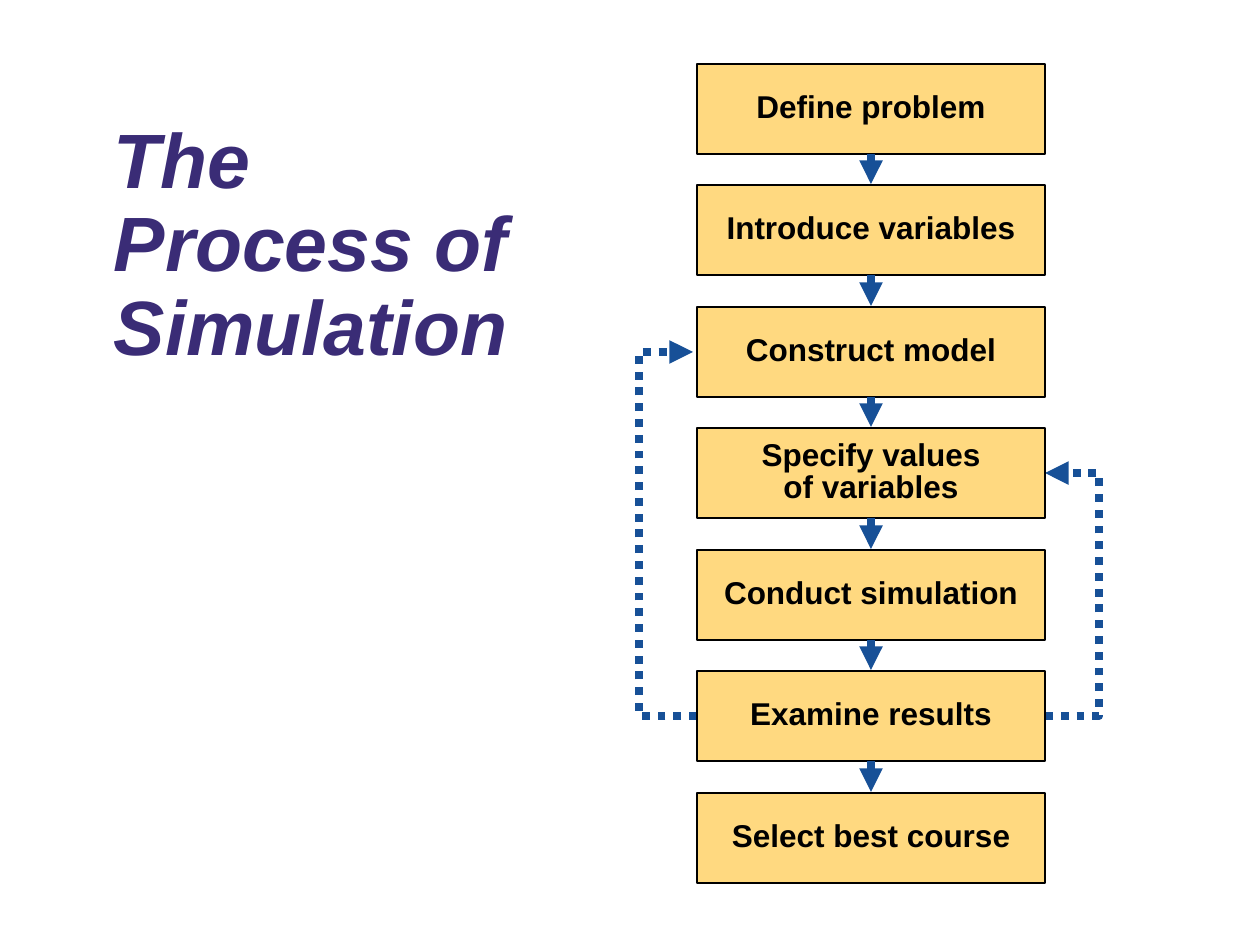
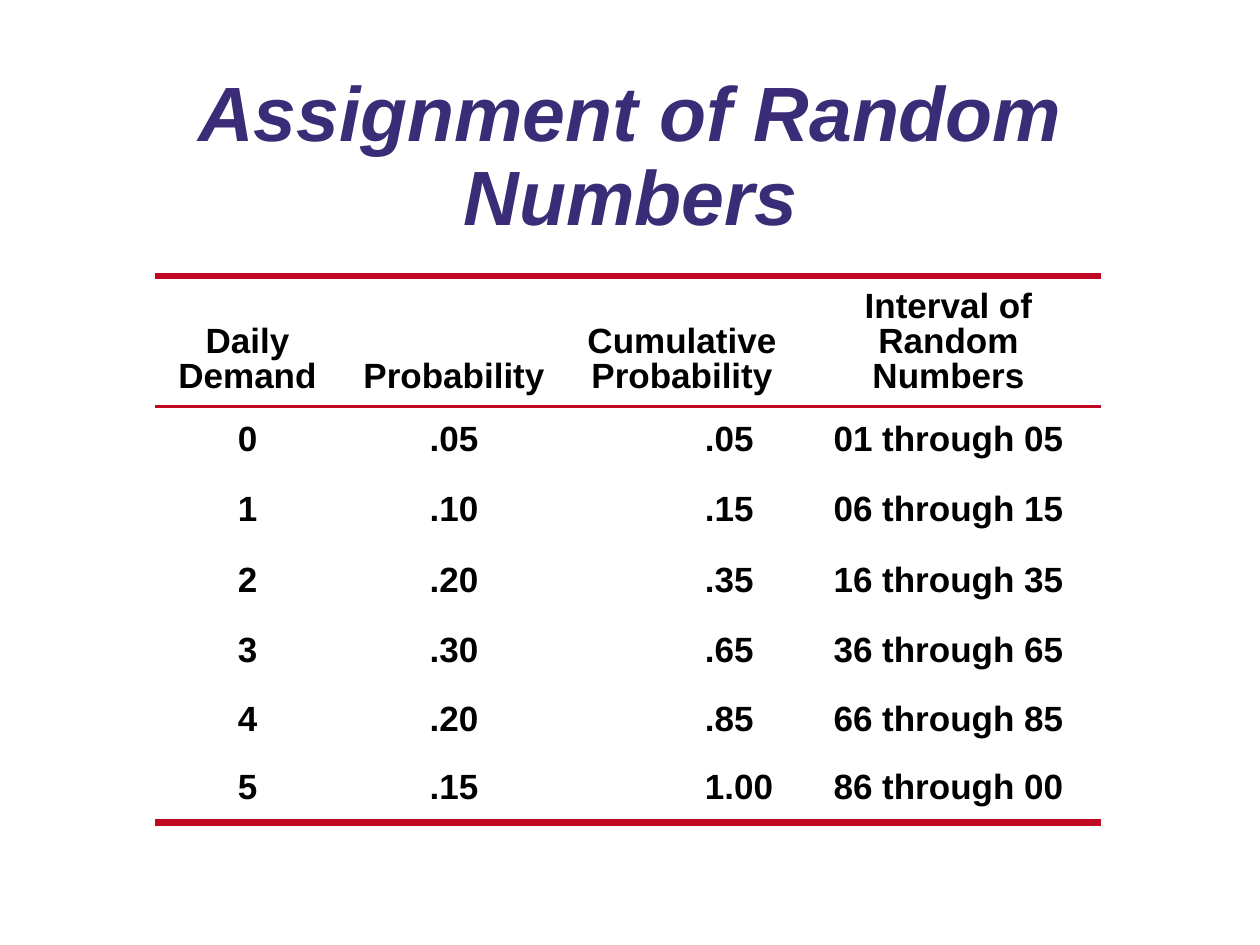
from dataclasses import dataclass

from pptx import Presentation
from pptx import util as u
from pptx.dml.color import RGBColor
from pptx.enum import shapes, text
from pptx.oxml import ns, xmlchemy

EMU_PER_PX = 914400 / 126


@dataclass(frozen=True)
class Theme:
    font: str = "Arial"
    title_color: str = "3A2C76"
    ink: str = "000000"
    box_fill: str = "FFD980"
    arrow: str = "175097"
    rule: str = "BF0922"
    title_size: float = 44
    step_size: float = 18
    table_size: float = 20
    box_line: float = 1.5
    arrow_line: float = 4.5
    thick_rule: float = 4.5
    thin_rule: float = 2.25


THEME = Theme()

STEPS = [
    "Define problem", "Introduce variables", "Construct model",
    "Specify values\nof variables", "Conduct simulation",
    "Examine results", "Select best course",
]
CONSTRUCT, SPECIFY, EXAMINE = 2, 3, 5
BOX_LEFT, BOX_WIDTH, BOX_HEIGHT = 697, 348, 90
BOX_RIGHT = BOX_LEFT + BOX_WIDTH

HEADINGS = ["Daily Demand", "Probability", "Cumulative Probability",
            "Interval of Random Numbers"]
DEMAND = [
    ("0", ".05", ".05", "01 through 05"),
    ("1", ".10", ".15", "06 through 15"),
    ("2", ".20", ".35", "16 through 35"),
    ("3", ".30", ".65", "36 through 65"),
    ("4", ".20", ".85", "66 through 85"),
    ("5", ".15", "1.00", "86 through 00"),
]
COLUMN_WIDTHS = [185, 228, 228, 305]
ROW_HEIGHTS = [126, 69, 71, 71, 69, 69, 67]
CUMULATIVE = 2
CUMULATIVE_INDENT = 137


def px(length):
    return u.Emu(round(length * EMU_PER_PX))


def rgb(color):
    return RGBColor.from_string(color)


def write(frame, words, size, color, align, spacing, italic=False):
    frame.text = words
    for paragraph in frame.paragraphs:
        paragraph.alignment = align
        paragraph.line_spacing = spacing
        for run in paragraph.runs:
            font = run.font
            font.name, font.size = THEME.font, u.Pt(size)
            font.bold, font.italic = True, italic
            font.color.rgb = rgb(color)


def add_title(slide, words, place, align, insets):
    title = slide.shapes.add_textbox(*map(px, place))
    frame = title.text_frame
    frame.word_wrap = True
    frame.vertical_anchor = text.MSO_ANCHOR.MIDDLE
    (frame.margin_left, frame.margin_top,
     frame.margin_right, frame.margin_bottom) = map(px, insets)
    write(frame, words, THEME.title_size, THEME.title_color, align, 0.9, italic=True)


# Flow chart

def step_top(index):
    return 64 + index * 243 // 2


def step_middle(index):
    return step_top(index) + BOX_HEIGHT // 2


def add_step(slide, index, words):
    box = slide.shapes.add_shape(
        shapes.MSO_SHAPE.RECTANGLE,
        *map(px, (BOX_LEFT, step_top(index), BOX_WIDTH, BOX_HEIGHT)))
    box.shadow.inherit = False
    box.fill.solid()
    box.fill.fore_color.rgb = rgb(THEME.box_fill)
    box.line.color.rgb = rgb(THEME.ink)
    box.line.width = u.Pt(THEME.box_line)
    frame = box.text_frame
    frame.word_wrap = False
    frame.vertical_anchor = text.MSO_ANCHOR.MIDDLE
    write(frame, words, THEME.step_size, THEME.ink, text.PP_ALIGN.CENTER, 0.85)


def style_arrow(line):
    line.color.rgb = rgb(THEME.arrow)
    line.width = u.Pt(THEME.arrow_line)
    head = xmlchemy.OxmlElement("a:tailEnd")
    head.set("type", "triangle")
    line._get_or_add_ln().append(head)


def add_step_arrow(slide, index):
    center = BOX_LEFT + BOX_WIDTH // 2
    arrow = slide.shapes.add_connector(
        shapes.MSO_CONNECTOR.STRAIGHT, px(center), px(step_top(index) + BOX_HEIGHT),
        px(center), px(step_top(index + 1) - 1))
    arrow._element.spPr.append(xmlchemy.OxmlElement("a:effectLst"))
    style_arrow(arrow.line)


def add_feedback(slide, target, start_x, outer_x, end_x):
    bottom, top = step_middle(EXAMINE), step_middle(target)
    builder = slide.shapes.build_freeform(start_x, bottom, scale=EMU_PER_PX)
    builder.add_line_segments(
        [(outer_x, bottom), (outer_x, top), (end_x, top)], close=False)
    loop = builder.convert_to_shape()
    loop.shadow.inherit = False
    loop.fill.background()
    loop.line.color.rgb = rgb(THEME.arrow)
    dash = xmlchemy.OxmlElement("a:prstDash")
    dash.set("val", "sysDot")
    loop.line._get_or_add_ln().append(dash)
    style_arrow(loop.line)


# Table

def set_borders(cell, top, bottom):
    properties = cell._tc.get_or_add_tcPr()
    for side, width in (("L", 0), ("R", 0), ("T", top), ("B", bottom)):
        border = xmlchemy.OxmlElement(f"a:ln{side}")
        properties.append(border)
        if not width:
            border.append(xmlchemy.OxmlElement("a:noFill"))
            continue
        border.set("w", str(u.Pt(width)))
        fill = xmlchemy.OxmlElement("a:solidFill")
        color = xmlchemy.OxmlElement("a:srgbClr")
        color.set("val", THEME.rule)
        fill.append(color)
        border.append(fill)


def add_demand_table(slide):
    rows = [HEADINGS, *DEMAND]
    last = len(rows) - 1
    table = slide.shapes.add_table(
        len(rows), len(HEADINGS), px(155), px(276),
        px(sum(COLUMN_WIDTHS)), px(sum(ROW_HEIGHTS))).table
    table.first_row = table.horz_banding = False
    for column, width in zip(table.columns, COLUMN_WIDTHS):
        column.width = px(width)
    rules = {0: THEME.thick_rule, 1: THEME.thin_rule, last + 1: THEME.thick_rule}
    for r, values in enumerate(rows):
        table.rows[r].height = px(ROW_HEIGHTS[r])
        for c, value in enumerate(values):
            cell = table.cell(r, c)
            set_borders(cell, rules.get(r, 0), rules.get(r + 1, 0))
            cell.fill.background()
            align = text.PP_ALIGN.CENTER
            cell.vertical_anchor = text.MSO_ANCHOR.MIDDLE
            if r == 0:
                cell.vertical_anchor = text.MSO_ANCHOR.BOTTOM
                cell.margin_bottom = px(11)
            elif c == CUMULATIVE:
                align = text.PP_ALIGN.LEFT
                cell.margin_left = px(CUMULATIVE_INDENT)
            write(cell.text_frame, value, THEME.table_size, THEME.ink, align, 0.9)


# Slides

def build_process(slide):
    add_feedback(slide, SPECIFY, BOX_RIGHT, BOX_RIGHT + 54, BOX_RIGHT)
    add_feedback(slide, CONSTRUCT, BOX_LEFT, BOX_LEFT - 58, BOX_LEFT - 4)
    for index, words in enumerate(STEPS):
        add_step(slide, index, words)
    for index in range(len(STEPS) - 1):
        add_step_arrow(slide, index)
    add_title(slide, "The\nProcess of Simulation", (87, 79, 494, 336),
              text.PP_ALIGN.LEFT, (27, 32, 13, 32))


def build_random_numbers(slide):
    add_title(slide, "Assignment of Random Numbers", (73, 66, 1115, 185),
              text.PP_ALIGN.CENTER, (13, 6, 13, 6))
    add_demand_table(slide)


def main():
    deck = Presentation()
    deck.slide_width, deck.slide_height = px(1260), px(945)
    blank = deck.slide_layouts[6]
    for build in (build_process, build_random_numbers):
        build(deck.slides.add_slide(blank))
    deck.save("out.pptx")


if __name__ == "__main__":
    main()
